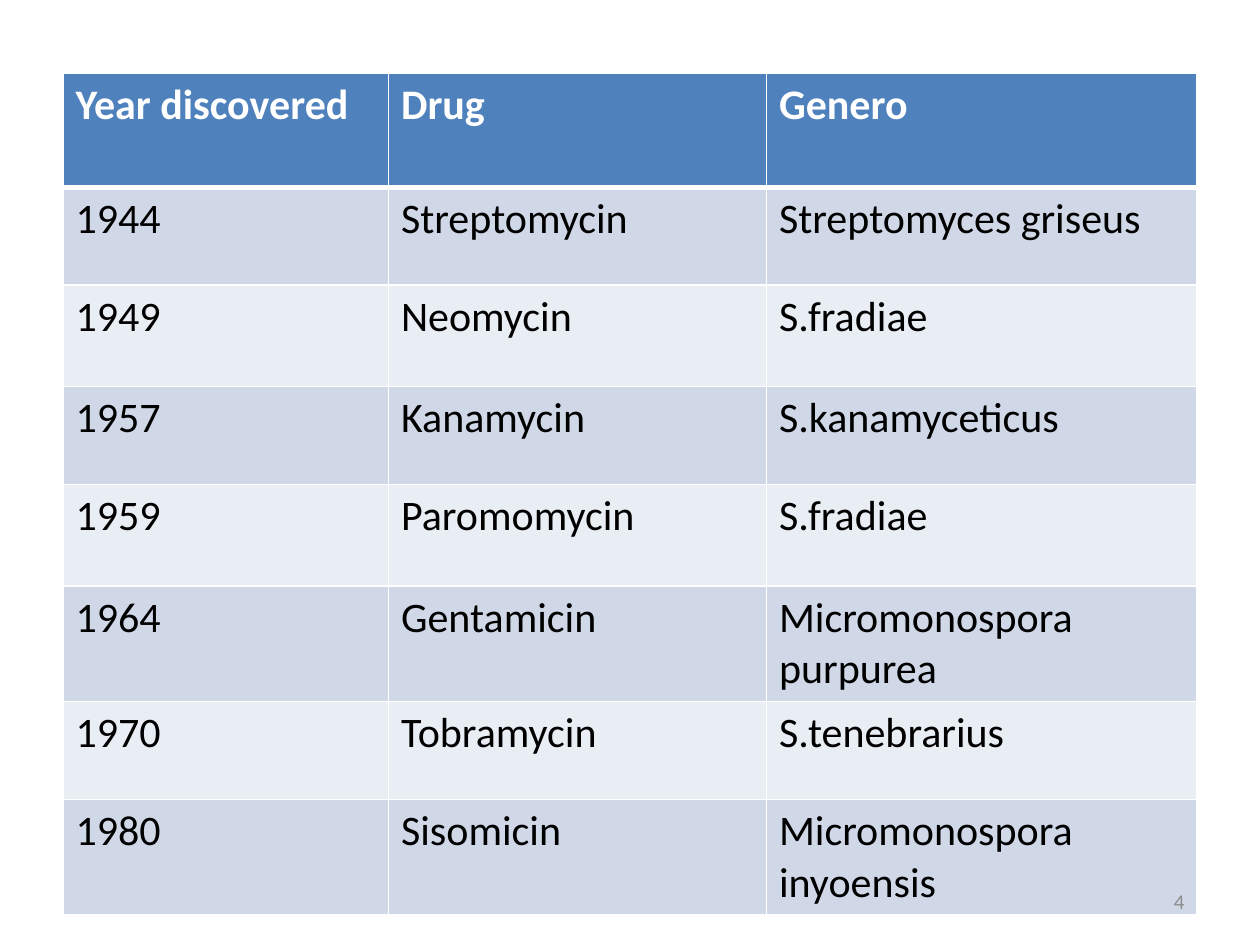
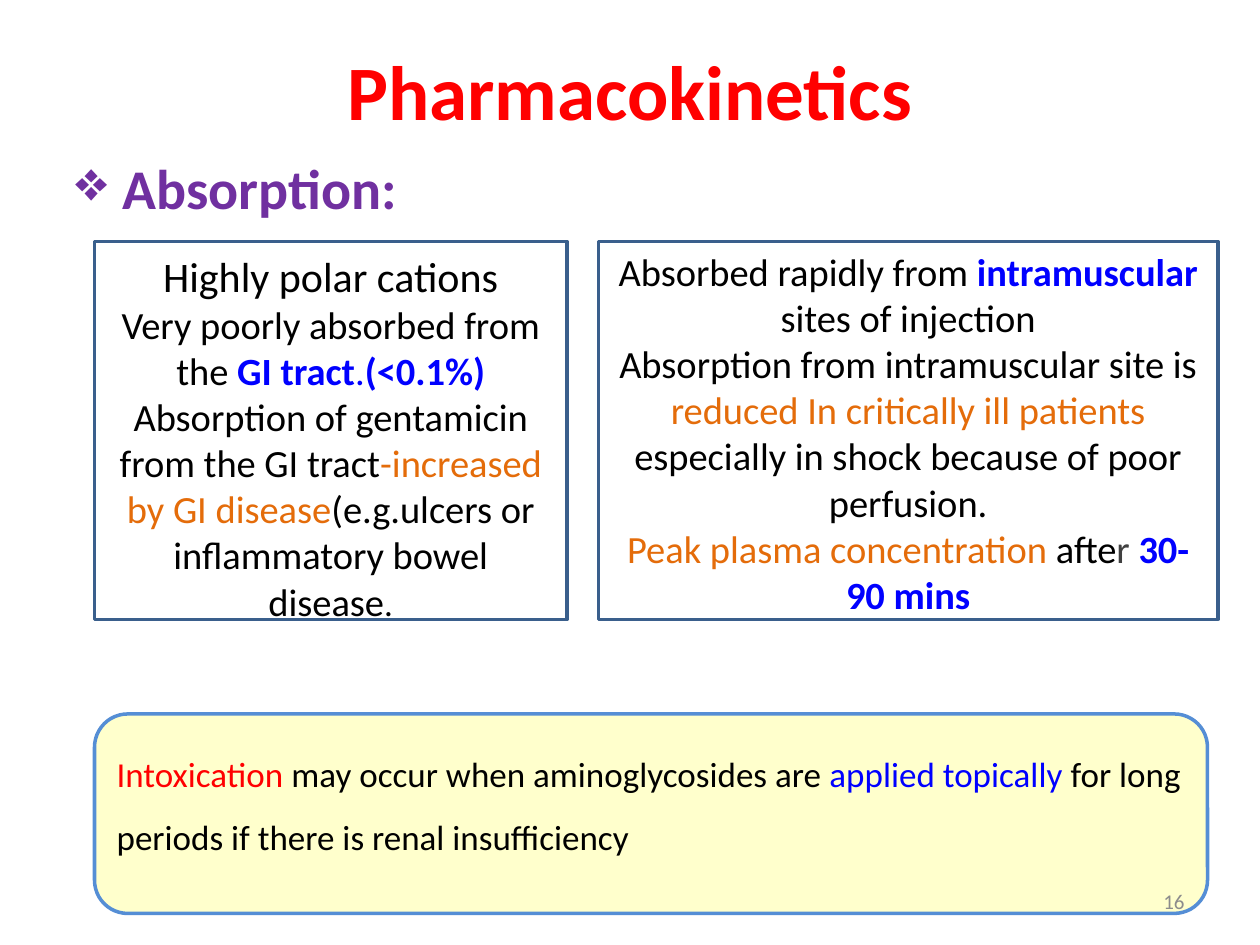
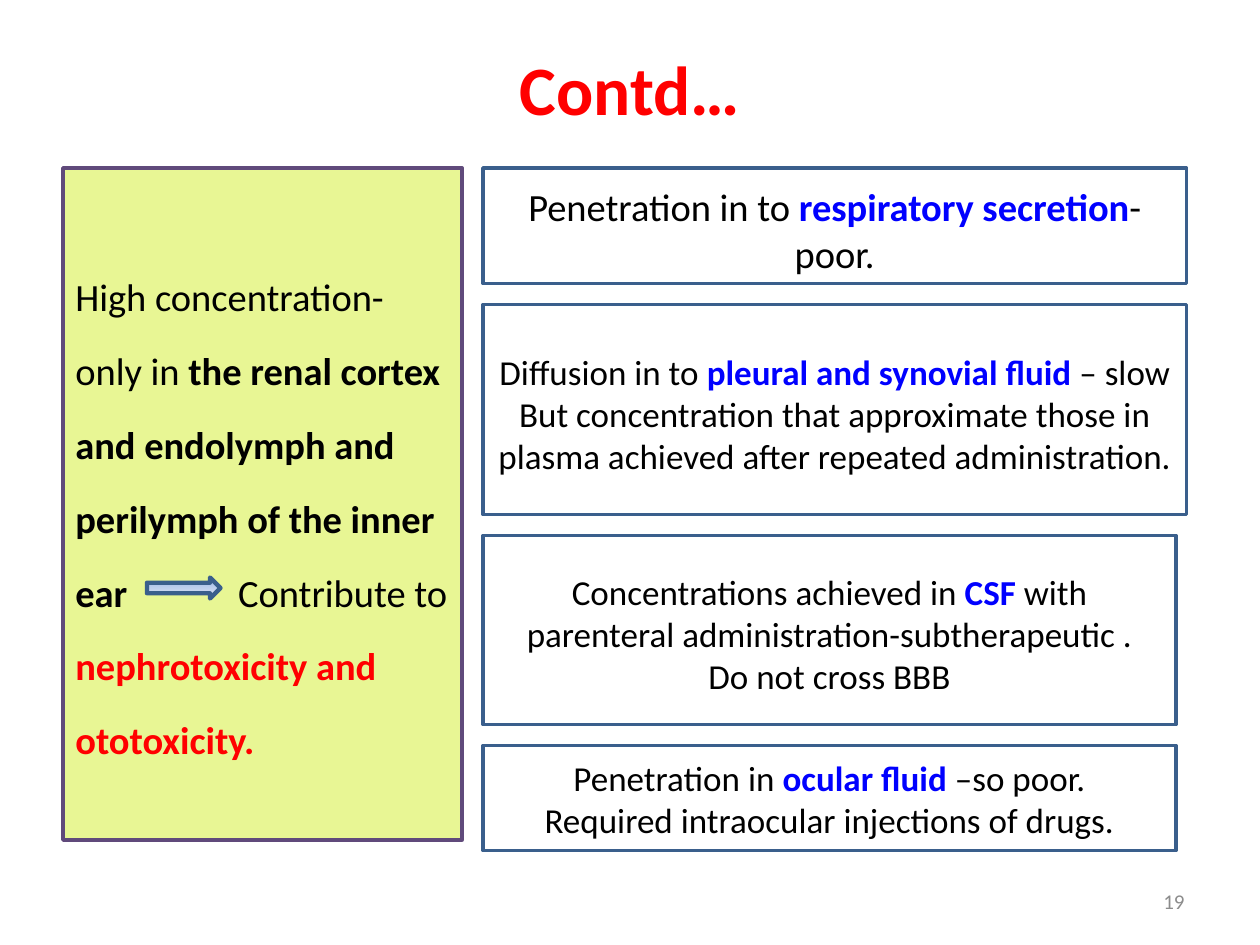
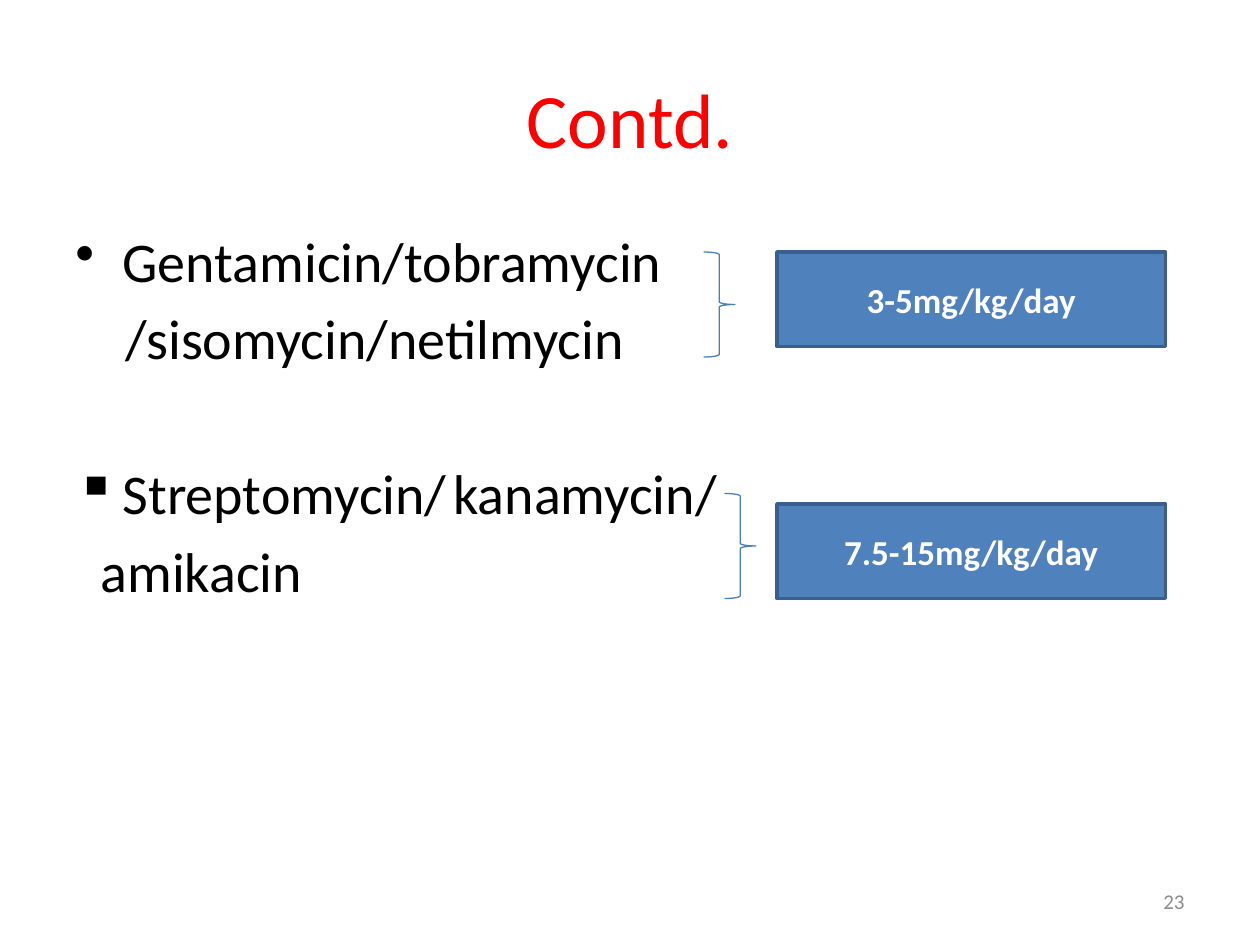
from lxml import etree
from pptx import Presentation
from pptx.dml.color import RGBColor
from pptx.enum.shapes import MSO_SHAPE
from pptx.enum.text import MSO_ANCHOR, MSO_AUTO_SIZE, PP_ALIGN
from pptx.oxml.ns import qn
from pptx.util import Pt

RECT, ROUND = MSO_SHAPE.RECTANGLE, MSO_SHAPE.ROUNDED_RECTANGLE
ARROW, BRACE = MSO_SHAPE.RIGHT_ARROW, MSO_SHAPE.RIGHT_BRACE
LEFT, CENTER, RIGHT = PP_ALIGN.LEFT, PP_ALIGN.CENTER, PP_ALIGN.RIGHT
TOP, MIDDLE = MSO_ANCHOR.TOP, MSO_ANCHOR.MIDDLE
TITLE_ONLY, BLANK = 5, 6

FONT = "Calibri"
C = {
    "black": "000000", "white": "FFFFFF", "red": "FF0000", "blue": "0000FF",
    "orange": "E46C0A", "purple": "7030A0", "gray": "404040", "number": "8C8C8C",
    "accent": "4F81BD", "edge": "3A5F8C", "brace": "4B7EBC",
    "band1": "D0D8E8", "band2": "E9EDF4",
    "yellow": "FFFFCC", "yellow_edge": "558ED5",
    "lime": "E8F694", "lime_edge": "604A7B",
    "arrow_top": "9AB5E4", "arrow_bottom": "E1E8F5",
}

# ---- Content: a paragraph is a string or a list of strings and (text, format) runs
KEY = {"color": "blue", "bold": True}
WARN = {"color": "orange"}
BOLD = {"bold": True}

DRUGS = [
    ("Year discovered", "Drug", "Genero"),
    ("1944", "Streptomycin", "Streptomyces griseus"),
    ("1949", "Neomycin", "S.fradiae"),
    ("1957", "Kanamycin", "S.kanamyceticus"),
    ("1959", "Paromomycin", "S.fradiae"),
    ("1964", "Gentamicin", "Micromonospora purpurea"),
    ("1970", "Tobramycin", "S.tenebrarius"),
    ("1980", "Sisomicin", "Micromonospora inyoensis"),
]
COL_WIDTHS = [186, 216, 246]
ROW_HEIGHTS = [65, 56, 58, 56, 58, 66, 56, 65]

GI_TRACT = [
    [("Highly polar cations", {"size": 24})],
    ["Very poorly absorbed from the ", ("GI tract", KEY), (".", {"color": "blue"}),
     ("(<0.1%)", KEY)],
    ["Absorption of gentamicin from the GI tract", ("-increased by GI disease", WARN),
     "(e.g.ulcers or inflammatory bowel disease", (".", {"size": 20})],
]
INTRAMUSCULAR = [
    ["Absorbed rapidly from ", ("intramuscular ", KEY), "sites of injection"],
    ["Absorption from intramuscular site is ",
     ("reduced In critically ill patients ", WARN),
     "especially in shock because of poor perfusion."],
    [("Peak plasma concentration ", WARN), "afte", ("r ", {"color": "gray"}),
     ("30-90 mins", KEY)],
]
INTOXICATION = [
    [("Intoxication", {"color": "red"}), " may occur when aminoglycosides are ",
     ("applied topically", {"color": "blue"}),
     " for long periods if there is renal insufficiency"],
]

HIGH_CONCENTRATION = [
    ["High concentration- only in ",
     ("the renal cortex and endolymph and perilymph of the inner ear\t", BOLD),
     "Contribute to ",
     ("nephrotoxicity and ototoxicity.", {"color": "red", "bold": True})],
]
# width, height, text size, top inset, paragraphs
PENETRATION = [
    (402, 66, 22, 8, [
        ["Penetration in to ", ("respiratory secretion", KEY), "-poor."]]),
    (402, 120, 20, 8, [
        ["Diffusion in to ", ("pleural and synovial fluid ", KEY), "– slow"],
        "But concentration that approximate those in plasma achieved after "
        "repeated administration."]),
    (396, 108, 20, 8, [
        ["Concentrations achieved in ", ("CSF", KEY),
         " with parenteral administration-subtherapeutic ."],
        "Do not cross BBB"]),
    (396, 60, 20, 3.6, [
        ["Penetration in ", ("ocular fluid ", KEY), "–so poor."],
        "Required intraocular injections of drugs."]),
]

# text, bullet, left indent, space before
DOSE_GROUPS = [
    ("Gentamicin/tobramycin", "•", 27, 0),
    ("/sisomycin/netilmycin", None, 28.8, 5.6),
    ("Streptomycin/\tkanamycin/", "▪", 27, 50.3),
    ("amikacin", None, 14.4, 5.6),
]
# dose, box top, brace left, brace top
DOSES = [("7.5-15mg/kg/day", 288, 414, 282), ("3-5mg/kg/day", 144, 402, 144)]


# ---- Helpers
def rgb(name):
    return RGBColor.from_string(C[name])


def write(tf, paras, size=20, color="black", bold=False, align=LEFT, anchor=MIDDLE,
          spacing=None, top=3.6, bottom=3.6):
    tf.word_wrap = True
    tf.auto_size = MSO_AUTO_SIZE.NONE
    tf.vertical_anchor = anchor
    tf.margin_top, tf.margin_bottom = Pt(top), Pt(bottom)
    for i, para in enumerate(paras):
        p = tf.add_paragraph() if i else tf.paragraphs[0]
        p.alignment = align
        if spacing:
            p.line_spacing = spacing
        for run in [para] if isinstance(para, str) else para:
            text, own = (run, {}) if isinstance(run, str) else run
            fmt = {"size": size, "color": color, "bold": bold, **own}
            r = p.add_run()
            r.text = text
            r.font.name = FONT
            r.font.size = Pt(fmt["size"])
            r.font.bold = fmt["bold"]
            r.font.color.rgb = rgb(fmt["color"])


def indent(p, left, bullet=None):
    pPr = p._p.get_or_add_pPr()
    pPr.set("marL", str(Pt(left)))
    pPr.set("indent", str(Pt(-left if bullet else 0)))
    if bullet:
        etree.SubElement(pPr, qn("a:buChar")).set("char", bullet)


def tab_stop(p, pos):
    tabs = etree.SubElement(p._p.get_or_add_pPr(), qn("a:tabLst"))
    tab = etree.SubElement(tabs, qn("a:tab"))
    tab.set("pos", str(Pt(pos)))
    tab.set("algn", "l")


def border(cell, **widths):
    tcPr = cell._tc.get_or_add_tcPr()
    for side in "LRTB":
        ln = etree.SubElement(tcPr, qn("a:ln" + side))
        ln.set("w", str(Pt(widths.get(side, 1))))
        fill = etree.SubElement(ln, qn("a:solidFill"))
        etree.SubElement(fill, qn("a:srgbClr")).set("val", C["white"])


def add_text(s, box, paras, **fmt):
    tb = s.shapes.add_textbox(*map(Pt, box))
    write(tb.text_frame, paras, **fmt)
    return tb.text_frame


def add_box(s, kind, box, fill="white", line="edge", weight=2, paras=(), **fmt):
    sp = s.shapes.add_shape(kind, *map(Pt, box))
    sp.shadow.inherit = False
    if fill:
        sp.fill.solid()
        sp.fill.fore_color.rgb = rgb(fill)
    else:
        sp.fill.background()
    sp.line.color.rgb = rgb(line)
    sp.line.width = Pt(weight)
    if paras:
        write(sp.text_frame, paras, **fmt)
    return sp


def new_slide(prs, title=None, top=22, height=90, size=44, bold=True):
    s = prs.slides.add_slide(prs.slide_layouts[TITLE_ONLY if title else BLANK])
    if title:
        t = s.shapes.title
        t.left, t.top, t.width, t.height = map(Pt, (36, top, 648, height))
        write(t.text_frame, [title], size=size, color="red", bold=bold, align=CENTER)
    return s


def number(s, n):
    add_text(s, (516, 500.4, 168, 28.8), [str(n)], size=12, color="number", align=RIGHT)


# ---- Slides
def drug_table(prs):
    s = new_slide(prs)
    table = s.shapes.add_table(len(DRUGS), len(COL_WIDTHS), Pt(36), Pt(42),
                               Pt(sum(COL_WIDTHS)), Pt(sum(ROW_HEIGHTS))).table
    for col, width in zip(table.columns, COL_WIDTHS):
        col.width = Pt(width)
    for i, (row, height) in enumerate(zip(DRUGS, ROW_HEIGHTS)):
        table.rows[i].height = Pt(height)
        head = i == 0
        for j, text in enumerate(row):
            cell = table.cell(i, j)
            border(cell, B=3 if head else 1, T=3 if i == 1 else 1)
            cell.fill.solid()
            cell.fill.fore_color.rgb = rgb("accent" if head else
                                           "band1" if i % 2 else "band2")
            cell.vertical_anchor = TOP
            p = cell.text_frame.paragraphs[0]
            r = p.add_run()
            r.text = text
            r.font.name, r.font.size, r.font.bold = FONT, Pt(24), head
            r.font.color.rgb = rgb("white" if head else "black")
    number(s, 4)


def absorption(prs):
    s = new_slide(prs, "Pharmacokinetics", top=12, height=78)
    tf = add_text(s, (36, 84, 648, 50), ["Absorption:"], size=32, color="purple",
                  bold=True, anchor=TOP)
    indent(tf.paragraphs[0], 27, "❖")
    add_box(s, RECT, (54, 138, 270, 216), paras=GI_TRACT, size=22, align=CENTER,
            anchor=TOP, top=5)
    add_box(s, RECT, (342, 138, 354, 216), paras=INTRAMUSCULAR, size=22, align=CENTER,
            anchor=TOP)
    add_box(s, ROUND, (54, 408, 636, 114), "yellow", "yellow_edge",
            paras=INTOXICATION, spacing=1.5, bottom=25)
    number(s, 16)


def distribution(prs):
    s = new_slide(prs, "Contd…", height=56, size=39.6)
    top, gap = 96, 12
    sp = add_box(s, RECT, (36, top, 228, 384), "lime", "lime_edge",
                 paras=HIGH_CONCENTRATION, size=22, spacing=1.6)
    tab_stop(sp.text_frame.paragraphs[0], 93)

    arrow = add_box(s, ARROW, (84, 330, 42, 12), weight=2.5)
    arrow.fill.gradient()
    arrow.fill.gradient_angle = 270
    for stop, name in zip(arrow.fill.gradient_stops, ("arrow_top", "arrow_bottom")):
        stop.color.rgb = rgb(name)

    # Stack of boxes with equal gaps
    for width, height, size, inset, paras in PENETRATION:
        add_box(s, RECT, (276, top, width, height), paras=paras, size=size,
                align=CENTER, top=inset)
        top += height + gap
    number(s, 19)


def dosage(prs):
    s = new_slide(prs, "Contd.", bold=False)
    tf = add_text(s, (36, 126, 648, 356), [g[0] for g in DOSE_GROUPS], size=32,
                  anchor=TOP)
    for p, (_, bullet, left, before) in zip(tf.paragraphs, DOSE_GROUPS):
        indent(p, left, bullet)
        p.space_before = Pt(before)
    for _, _, left, top in DOSES:
        add_box(s, BRACE, (left, top, 18, 60), None, "brace", 0.75)
    for dose, top, _, _ in DOSES:
        add_box(s, RECT, (444, top, 222, 54), "accent", paras=[dose], color="white",
                bold=True, align=CENTER)
    number(s, 23)


def main():
    prs = Presentation()
    prs.slide_width, prs.slide_height = Pt(720), Pt(540)
    for build in (drug_table, absorption, distribution, dosage):
        build(prs)
    prs.save("out.pptx")


if __name__ == "__main__":
    main()
